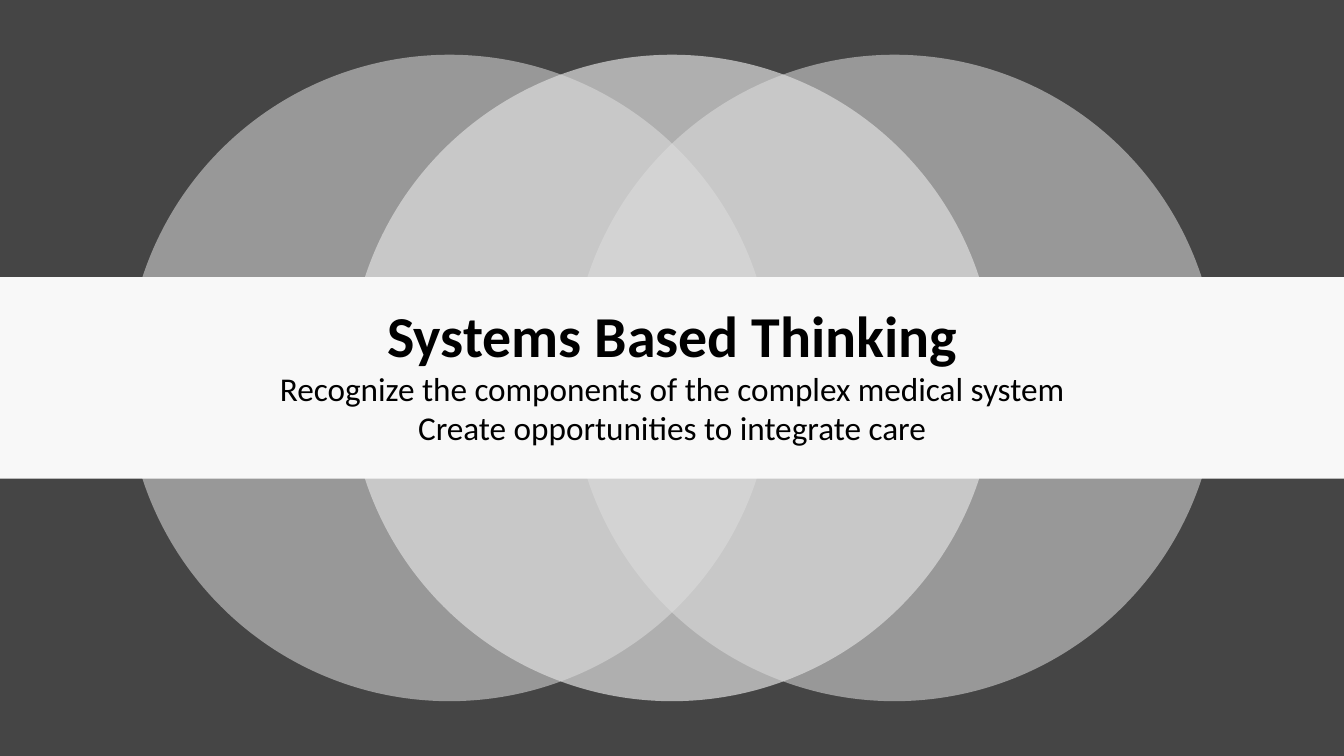
"""Build the Systems Based Thinking slide: a text band across three overlapping circles."""
import pptx
import pptx.dml.color
import pptx.enum.shapes
import pptx.enum.text
import pptx.oxml
import pptx.oxml.ns
import pptx.util

Pt = pptx.util.Pt
SHAPE = pptx.enum.shapes.MSO_SHAPE

TITLE = "Systems Based Thinking"
GOALS = [
    "Recognize the components of the complex medical system",
    "Create opportunities to integrate care",
]
CIRCLES = [(-1, 55), (1, 55), (0, 70)]

THEME = {
    "background": "454545",
    "circle": "DDDDDD",
    "band": "F8F8F8",
    "text": "000000",
    "font": "Calibri",
    "title_size": 31,
    "goal_size": 17.8,
}

WIDTH, HEIGHT = 720, 405
DIAMETER, CIRCLE_STEP = 346.3, 119.2
BAND_HEIGHT = 108
TEXT_BOX = (90, 164.2, 540, 81.4)


def rgb(name):
    """Return a theme colour."""
    return pptx.dml.color.RGBColor.from_string(THEME[name])


def apply(target, values):
    """Set each attribute in a dict of format values."""
    for name, value in values.items():
        setattr(target, name, value)


def add_filled(shapes, kind, box, color, opacity=100):
    """Add a borderless shape with a solid, optionally translucent fill."""
    sp = shapes.add_shape(kind, *map(Pt, box))
    sp.shadow.inherit = False
    sp.line.fill.background()
    sp.fill.solid()
    sp.fill.fore_color.rgb = rgb(color)
    if opacity < 100:
        clr = sp.element.spPr.find(".//" + pptx.oxml.ns.qn("a:srgbClr"))
        alpha = pptx.oxml.parse_xml(
            f'<a:alpha {pptx.oxml.ns.nsdecls("a")} val="{opacity * 1000}"/>'
        )
        clr.append(alpha)


def fill_title(sp):
    """Place and format the title placeholder in front of the band."""
    sp.element.getparent().append(sp.element)
    apply(sp, dict(zip(("left", "top", "width", "height"), map(Pt, TEXT_BOX))))
    tf = sp.text_frame
    apply(tf, {
        "word_wrap": True,
        "auto_size": pptx.enum.text.MSO_AUTO_SIZE.NONE,
        "vertical_anchor": pptx.enum.text.MSO_ANCHOR.MIDDLE,
    })
    tf.text = "\n".join([TITLE, *GOALS])
    for i, p in enumerate(tf.paragraphs):
        apply(p, {
            "alignment": pptx.enum.text.PP_ALIGN.CENTER,
            "line_spacing": 0.7,
            "space_before": Pt(0),
            "space_after": Pt(6),
        })
        font = p.runs[0].font
        apply(font, {
            "name": THEME["font"],
            "size": Pt(THEME["goal_size" if i else "title_size"]),
            "bold": i == 0,
        })
        font.color.rgb = rgb("text")


def main():
    """Assemble and save the slide."""
    prs = pptx.Presentation()
    apply(prs, {"slide_width": Pt(WIDTH), "slide_height": Pt(HEIGHT)})
    s = prs.slides.add_slide(prs.slide_layouts.get_by_name("Title Only"))
    s.background.fill.solid()
    s.background.fill.fore_color.rgb = rgb("background")

    group = s.shapes.add_group_shape()
    for offset, opacity in CIRCLES:
        left = (WIDTH - DIAMETER) / 2 + offset * CIRCLE_STEP
        box = (left, (HEIGHT - DIAMETER) / 2, DIAMETER, DIAMETER)
        add_filled(group.shapes, SHAPE.OVAL, box, "circle", opacity)

    band = (0, (HEIGHT - BAND_HEIGHT) / 2, WIDTH, BAND_HEIGHT)
    add_filled(s.shapes, SHAPE.RECTANGLE, band, "band")
    fill_title(s.shapes.title)
    prs.save("out.pptx")


if __name__ == "__main__":
    main()
